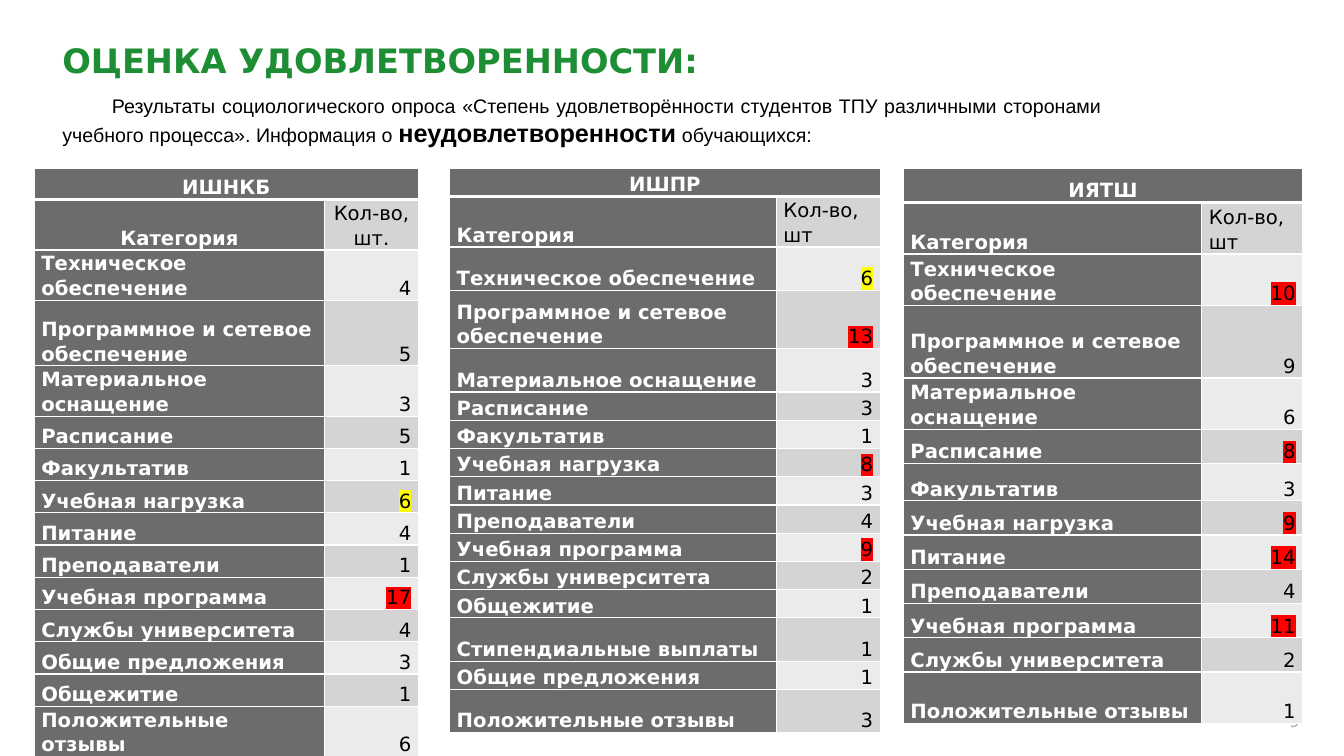
from lxml.etree import SubElement
from pptx import Presentation
from pptx.dml.color import RGBColor
from pptx.enum.text import MSO_ANCHOR, MSO_AUTO_SIZE, PP_ALIGN
from pptx.oxml import parse_xml
from pptx.oxml.ns import nsdecls, qn
from pptx.util import Pt

PX = 9144  # 100 px to the inch
COLORS = {
    "green": "1E8E35", "black": "000000", "white": "FFFFFF", "page": "AEAEAE",
    "dark": "6B6C6B", "band": "D4D4D4", "light": "EBEBEB",
    "yellow": "FFFF00", "red": "FF0000",
}
SANS = "DejaVu Sans"
LEFT, CENTER, RIGHT = PP_ALIGN.LEFT, PP_ALIGN.CENTER, PP_ALIGN.RIGHT

# Each survey row: category, count, row height, highlight
SCHOOLS = [
    {
        "name": "ИШНКБ", "box": (34, 167), "columns": (288, 93),
        "title_height": 31, "head": "Кол-во, шт.", "head_height": 48,
        "head_align": CENTER,
        "rows": [
            ("Техническое обеспечение", 4, 48, None),
            ("Программное и сетевое обеспечение", 5, 65, None),
            ("Материальное оснащение", 3, 48, None),
            ("Расписание", 5, 32, None),
            ("Факультатив", 1, 32, None),
            ("Учебная нагрузка", 6, 32, "yellow"),
            ("Питание", 4, 32, None),
            ("Преподаватели", 1, 32, None),
            ("Учебная программа", 17, 32, "red"),
            ("Службы университета", 4, 32, None),
            ("Общие предложения", 3, 32, None),
            ("Общежитие", 1, 32, None),
            ("Положительные отзывы", 6, 48, None),
        ],
    },
    {
        "name": "ИШПР", "box": (446, 167), "columns": (324, 103),
        "title_height": 28, "head": "Кол-во, шт", "head_height": 35,
        "head_align": LEFT,
        "rows": [
            ("Техническое обеспечение", 6, 43, "yellow"),
            ("Программное и сетевое обеспечение", 13, 58, "red"),
            ("Материальное оснащение", 3, 43, None),
            ("Расписание", 3, 28, None),
            ("Факультатив", 1, 28, None),
            ("Учебная нагрузка", 8, 28, "red"),
            ("Питание", 3, 28, None),
            ("Преподаватели", 4, 28, None),
            ("Учебная программа", 9, 28, "red"),
            ("Службы университета", 2, 28, None),
            ("Общежитие", 1, 28, None),
            ("Стипендиальные выплаты", 1, 43, None),
            ("Общие предложения", 1, 28, None),
            ("Положительные отзывы", 3, 43, None),
        ],
    },
    {
        "name": "ИЯТШ", "box": (896, 167), "columns": (296, 100),
        "title_height": 34, "head": "Кол-во, шт", "head_height": 51,
        "head_align": LEFT,
        "rows": [
            ("Техническое обеспечение", 10, 51, "red"),
            ("Программное и сетевое обеспечение", 9, 72, None),
            ("Материальное оснащение", 6, 51, None),
            ("Расписание", 8, 34, "red"),
            ("Факультатив", 3, 37, None),
            ("Учебная нагрузка", 9, 34, "red"),
            ("Питание", 14, 34, "red"),
            ("Преподаватели", 4, 34, None),
            ("Учебная программа", 11, 34, "red"),
            ("Службы университета", 2, 34, None),
            ("Положительные отзывы", 1, 51, None),
        ],
    },
]


def rgb(name):
    return RGBColor.from_string(COLORS[name])


def add_run(paragraph, text, color, size=14, name=SANS, bold=False):
    run = paragraph.add_run()
    run.text = text
    font = {"size": Pt(size), "name": name, "bold": bold}
    for attribute, value in font.items():
        setattr(run.font, attribute, value)
    run.font.color.rgb = rgb(color)
    return run


def add_text_box(slide, box, align, runs, line_spacing=1.0):
    """Place one paragraph, given as argument dicts for its runs, in a box."""
    shape = slide.shapes.add_textbox(*(value * PX for value in box))
    frame = shape.text_frame
    frame.word_wrap = True
    frame.vertical_anchor = MSO_ANCHOR.MIDDLE
    paragraph = frame.paragraphs[0]
    paragraph.alignment = align
    paragraph.line_spacing = line_spacing
    for run in runs:
        add_run(paragraph, **run)
    return frame


def add_title(slide, box):
    add_text_box(slide, box, LEFT, [
        {"text": "ОЦЕНКА УДОВЛЕТВОРЕННОСТИ:", "color": "green", "size": 24, "bold": True},
    ], 0.9)


def add_intro(slide, box):
    plain = {"color": "black", "name": "Arial"}
    frame = add_text_box(slide, box, PP_ALIGN.JUSTIFY, [
        {"text": "Результаты социологического опроса «Степень удовлетворённости "
                 "студентов ТПУ различными сторонами учебного процесса». "
                 "Информация о ", **plain},
        {"text": "неудовлетворенности", "size": 18, "bold": True, **plain},
        {"text": " обучающихся:", **plain},
    ])
    frame.auto_size = MSO_AUTO_SIZE.SHAPE_TO_FIT_TEXT
    frame.paragraphs[0]._p.get_or_add_pPr().set("indent", str(49 * PX))


def add_page_number(slide, box):
    add_text_box(slide, box, RIGHT, [{"text": "9", "color": "page", "size": 12}])


def highlight(run, color):
    mark = parse_xml(f'<a:highlight {nsdecls("a")}><a:srgbClr val="{COLORS[color]}"/></a:highlight>')
    run.font._element.find(qn("a:latin")).addprevious(mark)


def set_borders(cell, top, bottom):
    """Draw white cell edges; top and bottom widths are in points."""
    properties = cell._tc.get_or_add_tcPr()
    edges = {"lnL": 1, "lnR": 1, "lnT": top, "lnB": bottom}
    for index, (edge, width) in enumerate(edges.items()):
        line = SubElement(properties, qn(f"a:{edge}"), w=str(Pt(width)))
        fill = SubElement(line, qn("a:solidFill"))
        SubElement(fill, qn("a:srgbClr"), val=COLORS["white"])
        properties.insert(index, line)


def fill_cell(cell, text, align, fill, mark=None):
    layout = {"margin_left": 7 * PX, "margin_right": 7 * PX, "margin_top": 0,
              "margin_bottom": 0, "vertical_anchor": MSO_ANCHOR.BOTTOM}
    for attribute, value in layout.items():
        setattr(cell, attribute, value)
    cell.fill.solid()
    cell.fill.fore_color.rgb = rgb(fill)
    paragraph = cell.text_frame.paragraphs[0]
    paragraph.alignment = align
    paragraph.line_spacing = 1.07
    if text:
        dark = fill == "dark"
        run = add_run(paragraph, text, "white" if dark else "black", bold=dark)
        if mark:
            highlight(run, mark)


def add_school_table(slide, school):
    rows, columns = school["rows"], school["columns"]
    heights = [school["title_height"], school["head_height"], *(row[2] for row in rows)]
    size = (sum(columns), sum(heights))
    frame = slide.shapes.add_table(
        len(heights), 2, *(value * PX for value in school["box"] + size))
    table = frame.table
    table.first_row = table.horz_banding = False
    for column, width in zip(table.columns, columns):
        column.width = width * PX
    for row, height in zip(table.rows, heights):
        row.height = height * PX

    table.cell(0, 0).merge(table.cell(0, 1))
    fill_cell(table.cell(0, 0), school["name"], CENTER, "dark")
    fill_cell(table.cell(0, 1), "", CENTER, "dark")
    fill_cell(table.cell(1, 0), "Категория", school["head_align"], "dark")
    fill_cell(table.cell(1, 1), school["head"], school["head_align"], "band")
    for index, (category, count, _, mark) in enumerate(rows, 2):
        fill_cell(table.cell(index, 0), category, LEFT, "dark")
        fill_cell(table.cell(index, 1), str(count), RIGHT,
                  "band" if index % 2 else "light", mark)
    for index in range(len(heights)):
        for column in range(2):
            set_borders(table.cell(index, column),
                        top=3 if index == 1 else 1, bottom=3 if index == 0 else 1)


def main():
    presentation = Presentation()
    presentation.slide_width, presentation.slide_height = 1333 * PX, 750 * PX
    slide = presentation.slides.add_slide(presentation.slide_layouts[6])
    add_title(slide, (52, 29, 740, 66))
    add_intro(slide, (52, 88, 1051, 64))
    add_page_number(slide, (999, 695, 300, 40))
    for school in SCHOOLS:
        add_school_table(slide, school)
    presentation.save("out.pptx")


if __name__ == "__main__":
    main()
